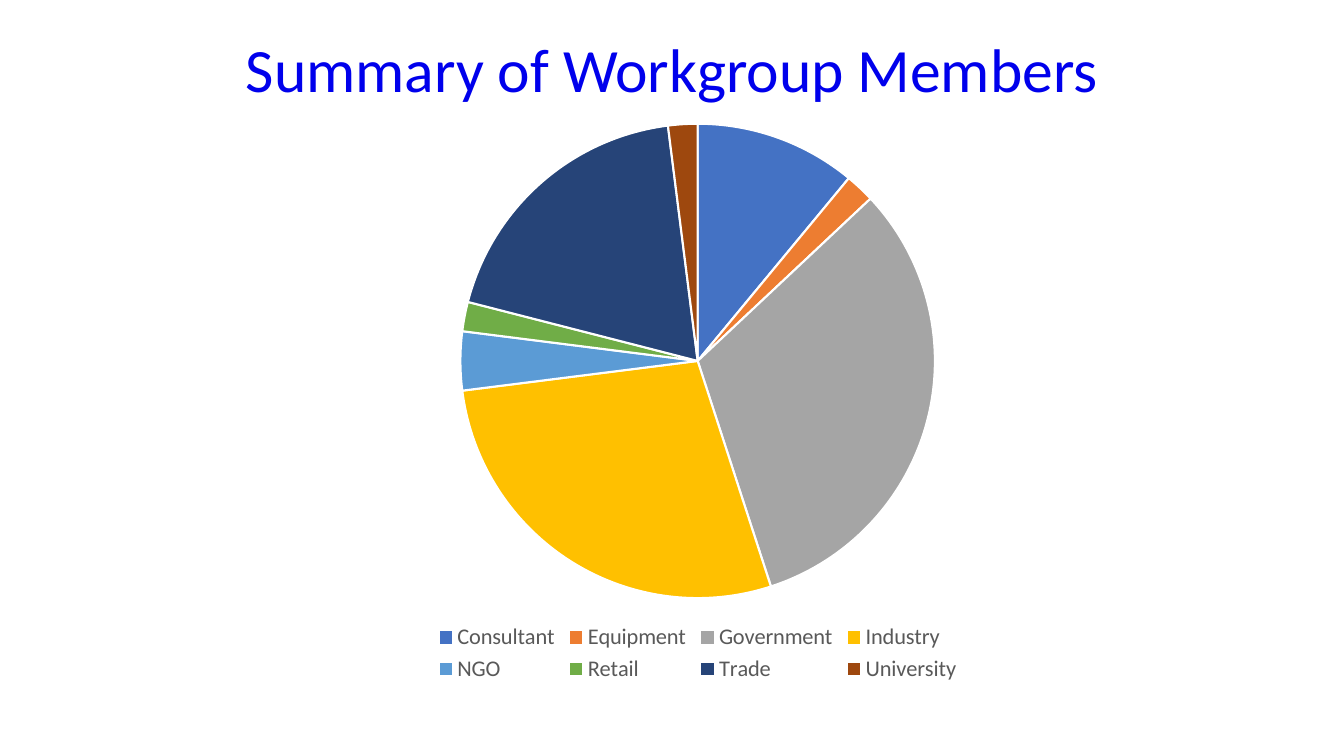
import pptx
import pptx.util
import pptx.chart.data
import pptx.dml.color
import pptx.enum.chart
import pptx.enum.text

RGBColor = pptx.dml.color.RGBColor
WHITE = RGBColor(0xFF, 0xFF, 0xFF)
BLACK = RGBColor(0x00, 0x00, 0x00)
TITLE_BLUE = RGBColor(0x00, 0x00, 0xEC)
LEGEND_GRAY = RGBColor(0x59, 0x59, 0x59)

# Member group, share in percent, slice colour
MEMBERS = [
    ("Consultant", 11, RGBColor(0x44, 0x72, 0xC4)),
    ("Equipment", 2, RGBColor(0xED, 0x7D, 0x31)),
    ("Government", 32, RGBColor(0xA5, 0xA5, 0xA5)),
    ("Industry", 28, RGBColor(0xFF, 0xC0, 0x00)),
    ("NGO", 4, RGBColor(0x5B, 0x9B, 0xD5)),
    ("Retail", 2, RGBColor(0x70, 0xAD, 0x47)),
    ("Trade", 19, RGBColor(0x26, 0x44, 0x78)),
    ("University", 2, RGBColor(0x9E, 0x48, 0x0E)),
]


class SlideBuilder:
    """Holds the style and the current slide; places are percent of its size."""

    font_name = "Calibri"

    def __init__(self, deck):
        self.width, self.height = deck.slide_width, deck.slide_height
        self.page = deck.slides.add_slide(deck.slide_layouts[6])

    def place(self, left, top, width, height):
        return (
            int(self.width * left / 100),
            int(self.height * top / 100),
            int(self.width * width / 100),
            int(self.height * height / 100),
        )

    def style_font(self, font, size, color):
        font.name = self.font_name
        font.size = pptx.util.Pt(size)
        font.color.rgb = color

    def title(self, text, *area):
        box = self.page.shapes.add_textbox(*self.place(*area))
        frame = box.text_frame
        frame.text = text
        frame.word_wrap = True
        frame.vertical_anchor = pptx.enum.text.MSO_ANCHOR.MIDDLE
        para = frame.paragraphs[0]
        para.alignment = pptx.enum.text.PP_ALIGN.CENTER
        para.line_spacing = 0.9
        self.style_font(para.runs[0].font, 44, TITLE_BLUE)

    def pie(self, members, *area):
        names, shares, colors = zip(*members)
        data = pptx.chart.data.CategoryChartData()
        data.categories = names
        data.add_series("Series 1", shares)
        kind = pptx.enum.chart.XL_CHART_TYPE.PIE
        chart = self.page.shapes.add_chart(kind, *self.place(*area), data).chart
        chart.has_title = False
        self.style_font(chart.font, 10, BLACK)

        # Slices with white borders
        plot = chart.plots[0]
        plot.vary_by_categories = True
        for index, color in enumerate(colors):
            slice_format = plot.series[0].points[index].format
            slice_format.fill.solid()
            slice_format.fill.fore_color.rgb = color
            slice_format.line.color.rgb = WHITE
            slice_format.line.width = pptx.util.Pt(1.5)

        # Legend below the pie
        chart.has_legend = True
        chart.legend.position = pptx.enum.chart.XL_LEGEND_POSITION.BOTTOM
        chart.legend.include_in_layout = False
        self.style_font(chart.legend.font, 16, LEGEND_GRAY)


def main():
    deck = pptx.Presentation()
    deck.slide_width = pptx.util.Inches(13.33)
    deck.slide_height = pptx.util.Inches(7.5)
    builder = SlideBuilder(deck)

    # Heading, then the chart of workgroup shares
    builder.title("Summary of Workgroup Members", 6.9, 0, 86.27, 19.33)
    builder.pie(MEMBERS, 24.38, 14.53, 55.06, 76.4)
    deck.save("out.pptx")


if __name__ == "__main__":
    main()
